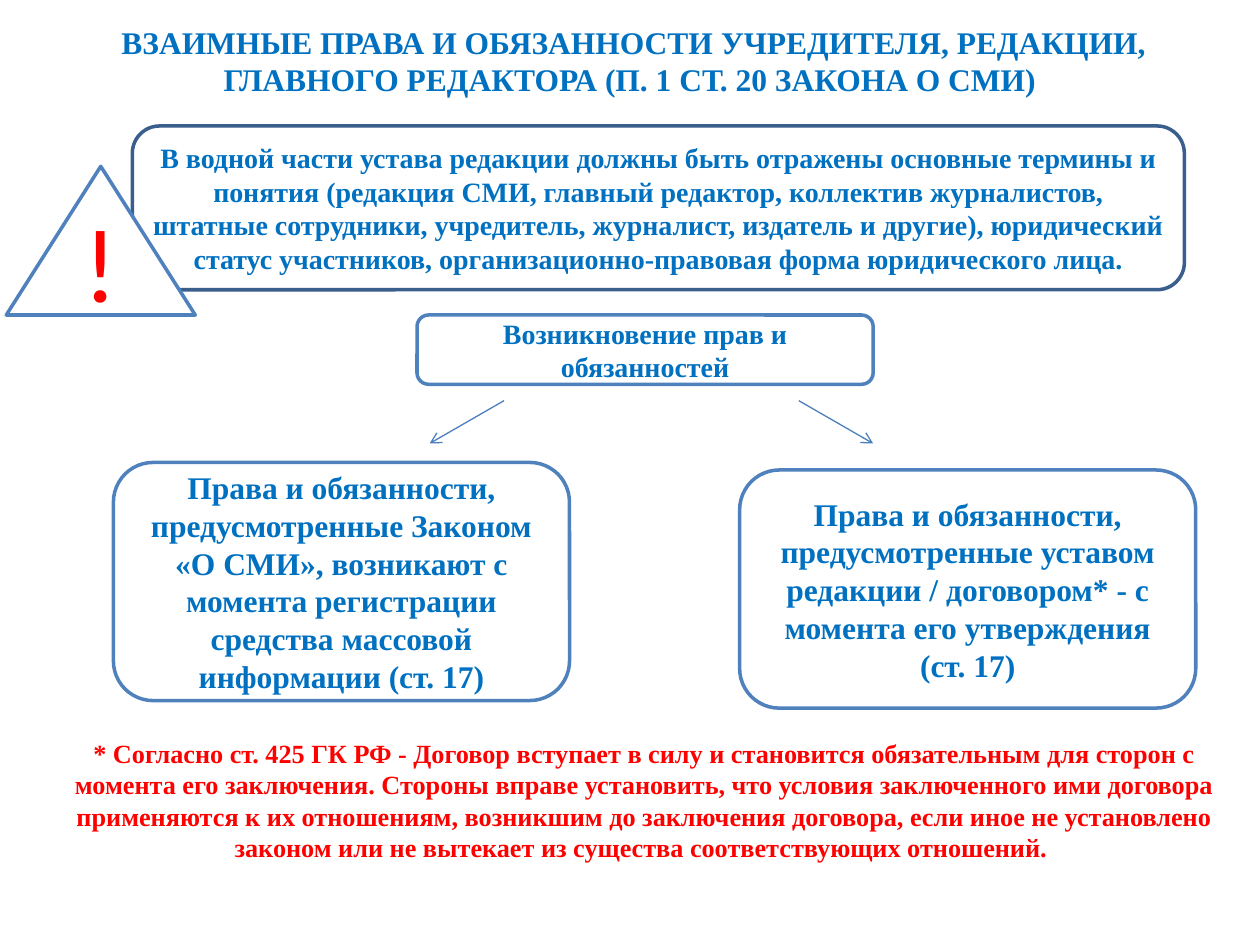
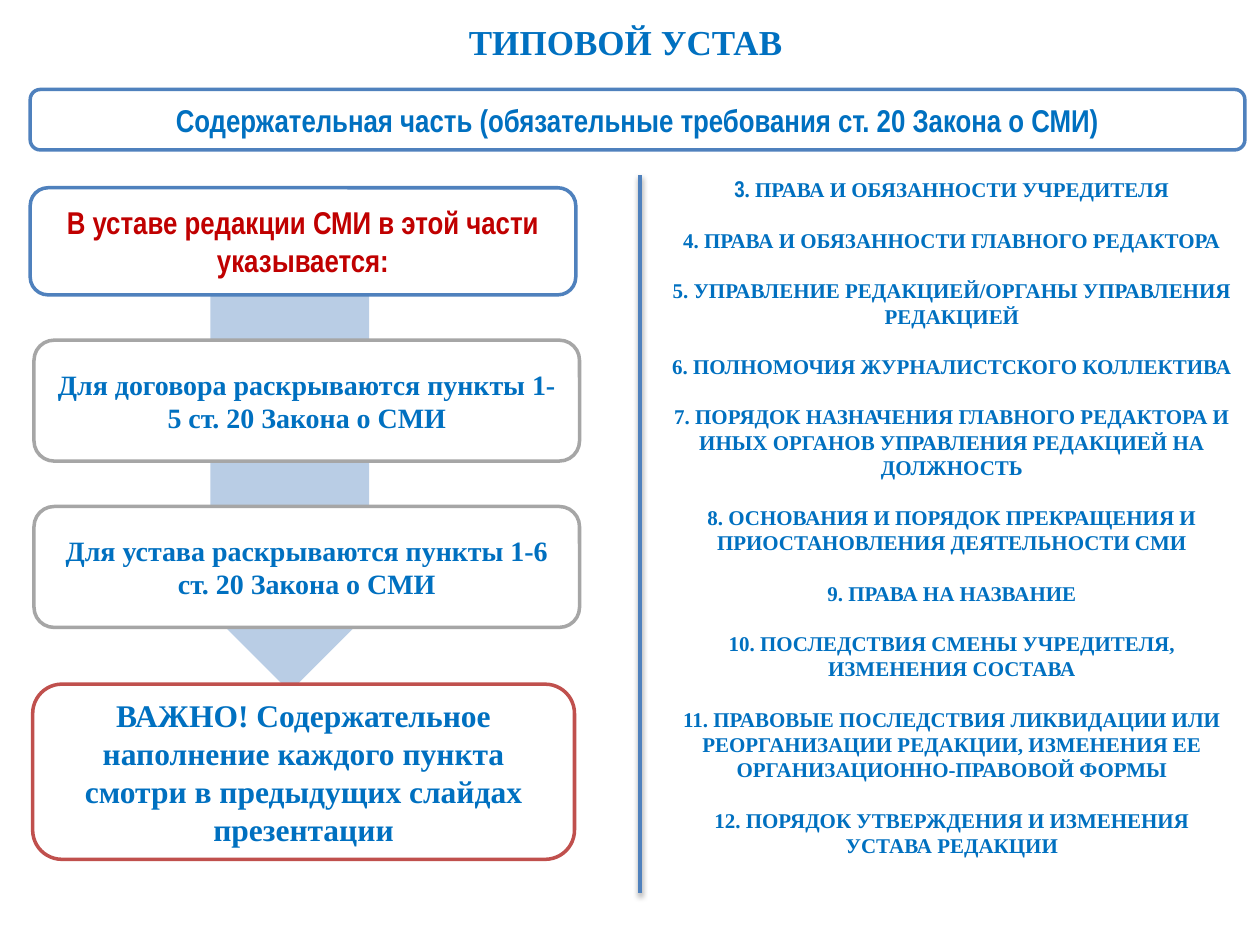
import pptx
import pptx.util
import pptx.dml.color
import pptx.enum.shapes
import pptx.enum.text
import pptx.oxml.ns
import lxml.etree

COLS, ROWS = 100, 75
BLUE, RED, DARK_RED = "0070C0", "FF0000", "C00000"
LINE, GREY, WHITE = "4F81BD", "A6A6A6", "FFFFFF"
SERIF, NARROW, SANS = "Times New Roman", "Arial Narrow", "Calibri"
SHAPES = pptx.enum.shapes.MSO_SHAPE
ANCHOR = pptx.enum.text.MSO_ANCHOR


def rgb(value):
    return pptx.dml.color.RGBColor.from_string(value)


def add_xml(parent, tag, **attributes):
    return lxml.etree.SubElement(parent, pptx.oxml.ns.qn(tag), attributes)


class Deck:
    base = {"name": SERIF, "size": 18, "bold": True, "color": BLUE}

    def __init__(self):
        self.prs = pptx.Presentation()
        self.prs.slide_width = pptx.util.Inches(10)
        self.prs.slide_height = pptx.util.Inches(7.5)
        self.s = None

    def slide(self):
        self.s = self.prs.slides.add_slide(self.prs.slide_layouts[6])

    def x(self, col):
        return round(self.prs.slide_width * col / COLS)

    def y(self, row):
        return round(self.prs.slide_height * row / ROWS)

    def place(self, at):
        left, top, width, height = at
        return self.x(left), self.y(top), self.x(width), self.y(height)

    def run(self, p, text, **fmt):
        r = p.add_run()
        r.text = text
        style = {**self.base, **fmt}
        r.font.color.rgb = rgb(style.pop("color"))
        style["size"] = pptx.util.Pt(style["size"])
        for key, value in style.items():
            setattr(r.font, key, value)

    def set_text(self, sp, paragraphs, anchor, gap=0, **fmt):
        tf = sp.text_frame
        for key, value in {"word_wrap": True, "vertical_anchor": anchor}.items():
            setattr(tf, key, value)
        for i, runs in enumerate(paragraphs):
            p = tf.paragraphs[0] if i == 0 else tf.add_paragraph()
            p.alignment = pptx.enum.text.PP_ALIGN.CENTER
            if i and gap:
                p.space_before = pptx.util.Pt(gap)
            for text, extra in ([(runs, {})] if isinstance(runs, str) else runs):
                self.run(p, text, **{**fmt, **extra})

    def text(self, at, *paragraphs, **fmt):
        sp = self.s.shapes.add_textbox(*self.place(at))
        self.set_text(sp, paragraphs, ANCHOR.TOP, **fmt)

    def shape(self, at, text="", kind=SHAPES.ROUNDED_RECTANGLE, fill=WHITE, line=LINE, **fmt):
        sp = self.s.shapes.add_shape(kind, *self.place(at))
        sp.shadow.inherit = False
        sp.fill.solid()
        sp.fill.fore_color.rgb = rgb(fill)
        if line:
            sp.line.color.rgb = rgb(line)
            sp.line.width = pptx.util.Pt(2)
        else:
            sp.line.fill.background()
        if text:
            self.set_text(sp, [text], ANCHOR.MIDDLE, **fmt)
        return sp

    def line(self, start, end, color=LINE, width=2.0, arrow=False, shadow=False):
        cn = self.s.shapes.add_connector(
            pptx.enum.shapes.MSO_CONNECTOR.STRAIGHT,
            self.x(start[0]), self.y(start[1]), self.x(end[0]), self.y(end[1]))
        cn.line.color.rgb = rgb(color)
        cn.line.width = pptx.util.Pt(width)
        properties = cn.element.spPr
        if arrow:
            add_xml(properties.find(pptx.oxml.ns.qn("a:ln")), "a:tailEnd", type="arrow")
        effects = add_xml(properties, "a:effectLst")
        if shadow:
            outer = add_xml(effects, "a:outerShdw", blurRad="40000", dist="20000",
                            dir="5400000", rotWithShape="0")
            add_xml(add_xml(outer, "a:srgbClr", val="000000"), "a:alpha", val="38000")


def rights_slide(d):
    d.slide()
    d.text((5.9, 1.3, 88.2, 7.4),
           " ВЗАИМНЫЕ ПРАВА И ОБЯЗАННОСТИ УЧРЕДИТЕЛЯ, РЕДАКЦИИ, "
           "ГЛАВНОГО РЕДАКТОРА (П. 1 СТ. 20 ЗАКОНА О СМИ)")
    d.shape((33.1, 25, 36.2, 5.5), "Возникновение прав и обязанностей", size=16)
    for side in (-1, 1):
        d.line((51.7 + side * 11.7, 31.8), (51.7 + side * 17.6, 35.2),
               color="4B7EBC", width=0.75, arrow=True)
    for left, top, text in (
        (9, 36.7, "Права и обязанности, предусмотренные Законом «О СМИ», возникают "
                  "с момента регистрации средства массовой информации (ст. 17)"),
        (58.7, 37.3, "Права и обязанности, предусмотренные уставом редакции / договором* - "
                     "с момента его утверждения (ст. 17)"),
    ):
        d.shape((left, top, 36.2, 18.9), text)
    d.text((3.8, 58, 94.7, 11.1),
           "* Согласно ст. 425 ГК РФ - Договор вступает в силу и становится обязательным для "
           "сторон с момента его заключения. Стороны вправе установить, что условия "
           "заключенного ими договора применяются к их отношениям, возникшим до заключения "
           "договора, если иное не установлено законом или не вытекает из существа "
           "соответствующих отношений. ", size=15, color=RED)
    d.shape((10.5, 10, 83.5, 13),
            "В водной части устава редакции должны быть отражены основные термины и понятия "
            "(редакция СМИ, главный редактор, коллектив журналистов, штатные сотрудники, "
            "учредитель, журналист, издатель и другие), юридический статус участников, "
            "организационно-правовая форма юридического лица.", line="3A5F8C", size=16)
    sign = d.shape((0.5, 13.2, 15, 11.8), "!", kind=SHAPES.ISOSCELES_TRIANGLE,
                   name=SANS, size=60, bold=False, color=RED)
    sign.text_frame.margin_bottom = d.y(3.2)


def charter_slide(d):
    d.slide()
    d.shape((10.4, 19.4, 25.2, 35.5), kind=SHAPES.DOWN_ARROW, fill="B9CDE5", line=None)
    d.text((10.2, 1.1, 79.6, 7.7), "ТИПОВОЙ УСТАВ ", size=20)
    d.shape((2.4, 7.1, 96.4, 4.8),
            "Содержательная часть (обязательные требования ст. 20 Закона о СМИ)", name=NARROW)
    d.line((50.8, 13.9), (50.8, 70.9), shadow=True)
    d.shape((2.4, 14.9, 43.3, 8.5), "В уставе редакции СМИ в этой части указывается:",
            name=NARROW, color=DARK_RED)
    for i, text in enumerate(("Для договора раскрываются пункты 1-5 ст. 20 Закона о СМИ",
                              "Для устава раскрываются пункты 1-6 ст. 20 Закона о СМИ")):
        d.shape((2.7, 27 + i * 13.2, 43.3, 9.6), text, line=GREY, size=16)
    d.text((52.3, 13.4, 46.5, 55.7),
           [("3", {"name": NARROW, "size": 13}), (". ПРАВА И ОБЯЗАННОСТИ УЧРЕДИТЕЛЯ", {})],
           "4. ПРАВА И ОБЯЗАННОСТИ ГЛАВНОГО РЕДАКТОРА",
           "5. УПРАВЛЕНИЕ РЕДАКЦИЕЙ/ОРГАНЫ УПРАВЛЕНИЯ РЕДАКЦИЕЙ",
           "6. ПОЛНОМОЧИЯ ЖУРНАЛИСТСКОГО КОЛЛЕКТИВА",
           "7. ПОРЯДОК НАЗНАЧЕНИЯ ГЛАВНОГО РЕДАКТОРА И ИНЫХ ОРГАНОВ УПРАВЛЕНИЯ "
           "РЕДАКЦИЕЙ НА ДОЛЖНОСТЬ",
           "8. ОСНОВАНИЯ И ПОРЯДОК ПРЕКРАЩЕНИЯ И ПРИОСТАНОВЛЕНИЯ ДЕЯТЕЛЬНОСТИ СМИ",
           "9. ПРАВА НА НАЗВАНИЕ",
           "10. ПОСЛЕДСТВИЯ СМЕНЫ УЧРЕДИТЕЛЯ, ИЗМЕНЕНИЯ СОСТАВА",
           "11. ПРАВОВЫЕ ПОСЛЕДСТВИЯ ЛИКВИДАЦИИ ИЛИ РЕОРГАНИЗАЦИИ РЕДАКЦИИ, "
           "ИЗМЕНЕНИЯ ЕЕ ОРГАНИЗАЦИОННО-ПРАВОВОЙ ФОРМЫ",
           "12. ПОРЯДОК УТВЕРЖДЕНИЯ И ИЗМЕНЕНИЯ УСТАВА РЕДАКЦИИ",
           size=12, gap=14.4)
    d.shape((2.6, 54.3, 43, 13.9),
            "ВАЖНО! Содержательное наполнение каждого пункта смотри в предыдущих "
            "слайдах презентации", line="C0504D")


def main():
    d = Deck()
    rights_slide(d)
    charter_slide(d)
    d.prs.save("out.pptx")


if __name__ == "__main__":
    main()
